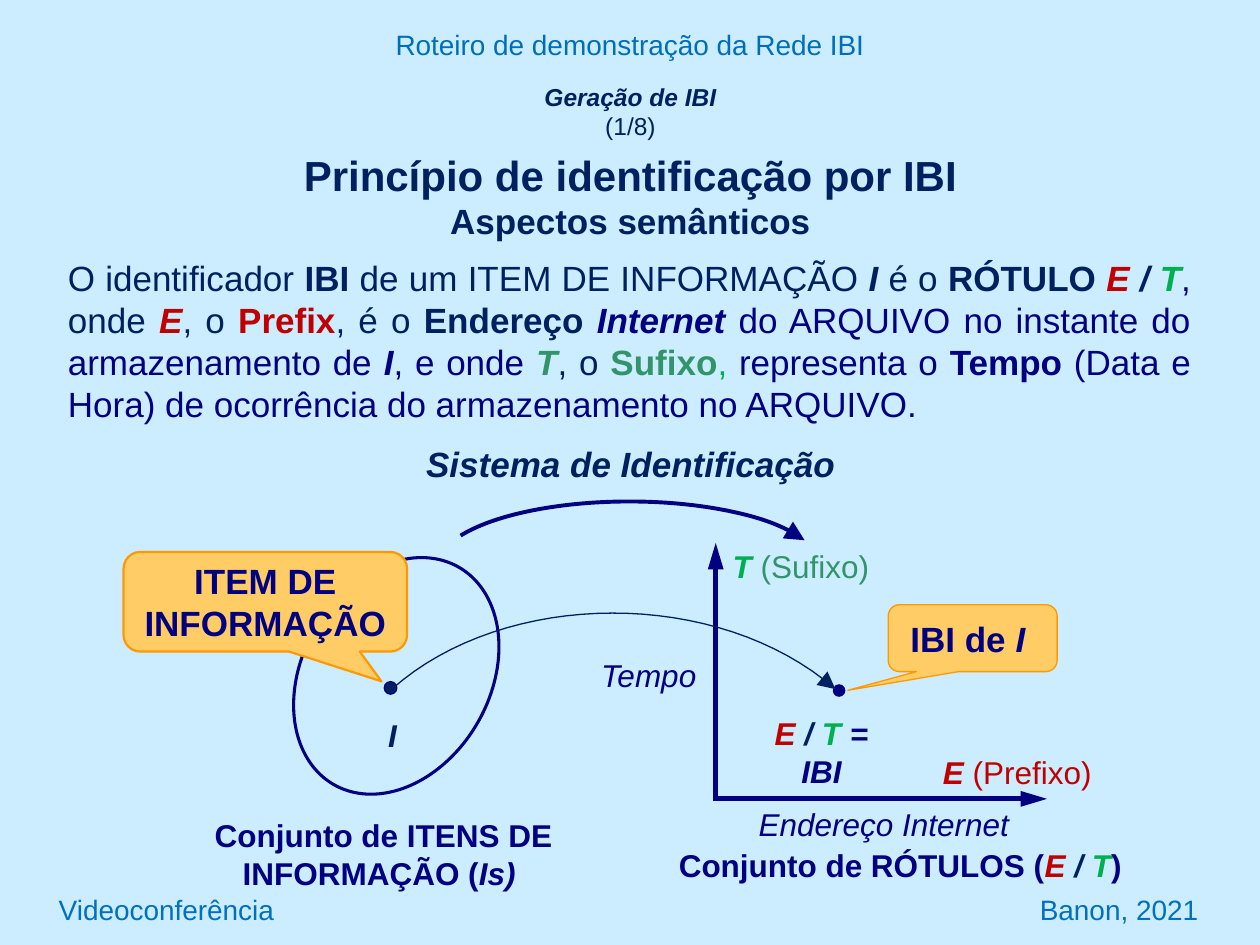
from lxml import etree
from pptx import Presentation
from pptx.dml.color import RGBColor
from pptx.enum.shapes import MSO_CONNECTOR, MSO_SHAPE
from pptx.enum.text import MSO_ANCHOR, MSO_AUTO_SIZE, PP_ALIGN
from pptx.oxml.ns import qn
from pptx.util import Pt

NAVY, DARK, RED, GREEN, TEAL = "000080", "002060", "C00000", "00B050", "32946A"
BLUE, PALE, ORANGE, AMBER = "0070C0", "CCECFF", "FF9900", "FFCC66"
color = RGBColor.from_string


def add_spans(para, size, spans, align=PP_ALIGN.CENTER):
    """Add (text, colour, style) runs; style holds b for bold and i for italic."""
    para.alignment = align
    for text, hue, style in spans:
        span = para.add_run()
        span.text = text
        span.font.name = "Arial"
        span.font.size = Pt(size)
        span.font.bold = "b" in style
        span.font.italic = "i" in style
        span.font.color.rgb = color(hue)


def paint(shape, line, weight=0.75, fill=None, head=None):
    """Set outline, fill and end arrow (width, length), and remove the shadow."""
    if line:
        shape.line.color.rgb = color(line)
        shape.line.width = Pt(weight)
    else:
        shape.line.fill.background()
    if fill:
        shape.fill.solid()
        shape.fill.fore_color.rgb = color(fill)
    elif hasattr(shape, "fill"):
        shape.fill.background()
    properties = shape._element.spPr
    if head:
        etree.SubElement(properties.find(qn("a:ln")), qn("a:tailEnd"),
                         type="triangle", w=head[0], len=head[1])
    etree.SubElement(properties, qn("a:effectLst"))


deck = Presentation()
deck.slide_width, deck.slide_height = Pt(720), Pt(540)
page = deck.slides.add_slide(deck.slide_layouts[5])
page.background.fill.solid()
page.background.fill.fore_color.rgb = color(PALE)
shapes = page.shapes

# Heading
title = shapes.title
title.left, title.top, title.width, title.height = Pt(149), Pt(43.2), Pt(422.6), Pt(97.2)
frame = title.text_frame
frame.auto_size = MSO_AUTO_SIZE.NONE
frame.vertical_anchor = MSO_ANCHOR.TOP
para = frame.paragraphs[0]
add_spans(para, 14, [("Geração de IBI", DARK, "bi")])
para.add_line_break()
add_spans(para, 14, [("(1/8)", DARK, "")])
para = frame.add_paragraph()
para.space_before = Pt(4.8)
add_spans(para, 24, [("Princípio de identificação por IBI ", DARK, "b")])
add_spans(para, 20, [("Aspectos semânticos", DARK, "b")])

# Definition
box = shapes.add_textbox(Pt(31.7), Pt(146.6), Pt(655.9), Pt(102.5))
frame = box.text_frame
frame.word_wrap = True
frame.margin_top = frame.margin_bottom = 0
add_spans(frame.paragraphs[0], 20, [
    ("O identificador ", DARK, ""), ("IBI", DARK, "b"),
    (" de um ITEM DE INFORMAÇÃO ", DARK, ""), ("I", DARK, "bi"),
    (" é o ", DARK, ""), ("RÓTULO", DARK, "b"), (" E ", RED, "bi"),
    ("/ ", DARK, "bi"), ("T", GREEN, "bi"), (", ", NAVY, ""),
    ("onde ", DARK, ""), ("E", RED, "bi"), (", o ", DARK, ""),
    ("Prefix", RED, "b"), (", é o ", DARK, ""), ("Endereço ", DARK, "b"),
    ("Internet ", NAVY, "bi"),
    ("do ARQUIVO no instante do armazenamento de ", NAVY, ""),
    ("I", NAVY, "bi"), (", e onde ", NAVY, ""), ("T", TEAL, "bi"),
    (", o ", DARK, ""), ("Sufixo", TEAL, "b"), (", ", GREEN, ""),
    ("representa o ", NAVY, ""), ("Tempo", NAVY, "b"),
    (" (Data e Hora) de ocorrência do armazenamento no ARQUIVO.", NAVY, ""),
], PP_ALIGN.JUSTIFY)

# Axes of the label set
for start_x, start_y, end_x, end_y in [(407.5, 456.5, 598.3, 456.5),
                                       (409, 456.5, 409, 310.3)]:
    axis = shapes.add_connector(MSO_CONNECTOR.STRAIGHT, Pt(start_x), Pt(start_y),
                                Pt(end_x), Pt(end_y))
    paint(axis, NAVY, 3, head=("med", "lg"))

# Item set and the two points
for left, top, width, height, angle, line, weight, fill in [
    (475.9, 391, 7.2, 7.2, 0, None, 0, NAVY),
    (172.8, 314.6, 107.3, 143.3, 30, NAVY, 1.75, None),
    (219.6, 389.5, 7.2, 7.2, 0, NAVY, 0.75, DARK),
]:
    oval = shapes.add_shape(MSO_SHAPE.OVAL, Pt(left), Pt(top), Pt(width), Pt(height))
    oval.rotation = angle
    paint(oval, line, weight, fill)

# Curved arrow from the item to its label, sampled from a Bézier curve
controls = [(223.9, 393.8), (288.7, 336.2), (410.4, 335.5), (477.4, 393.8)]
steps = 32
curve = []
for step in range(steps + 1):
    t = step / steps
    weights = [(1 - t) ** 3, 3 * t * (1 - t) ** 2, 3 * t ** 2 * (1 - t), t ** 3]
    curve.append(tuple(Pt(sum(w * point[axis] for w, point in zip(weights, controls)))
                       for axis in (0, 1)))
builder = shapes.build_freeform(*curve[0])
builder.add_line_segments(curve[1:], close=False)
paint(builder.convert_to_shape(), DARK, 0.75, head=("lg", "lg"))

# Callouts
for left, top, width, height, tip, weight, spans in [
    (507.6, 345.6, 96.5, 38.2, (-0.74, 0.78), 0.75,
     [("IBI de ", NAVY, "b"), ("I ", NAVY, "bi")]),
    (70.6, 315.4, 162, 56.9, (0.41, 0.8), 1.25,
     [("ITEM DE INFORMAÇÃO", NAVY, "b")]),
]:
    callout = shapes.add_shape(MSO_SHAPE.ROUNDED_RECTANGULAR_CALLOUT,
                               Pt(left), Pt(top), Pt(width), Pt(height))
    callout.adjustments[0], callout.adjustments[1] = tip
    paint(callout, ORANGE, weight, AMBER)
    callout.text_frame.vertical_anchor = MSO_ANCHOR.MIDDLE
    add_spans(callout.text_frame.paragraphs[0], 20, spans)

# Arc of the identification system, angles in degrees
arc = shapes.add_shape(MSO_SHAPE.ARC, Pt(249.8), Pt(286.6), Pt(219.6), Pt(74.9))
for index, degrees in enumerate((190.55, 351.31)):
    arc.adjustments[index] = degrees * 0.6
paint(arc, NAVY, 2.25, head=("lg", "lg"))

# Labels: left, top, width, height, wrap, size, alignment, spans
CENTER = PP_ALIGN.CENTER
for left, top, width, height, wrap, size, align, spans in [
    (425.5, 456.5, 159.1, 28.8, False, 18, CENTER, [("Endereço Internet", NAVY, "i")]),
    (108, 463, 217.4, 51.1, True, 18, CENTER,
     [(" Conjunto de ITENS DE INFORMAÇÃO (", NAVY, "b"), ("Is)", NAVY, "bi")]),
    (214.6, 405.4, 19.4, 28.8, False, 18, CENTER, [("I", DARK, "bi")]),
    (433.4, 404.6, 72, 50.4, True, 18, CENTER,
     [("E", RED, "bi"), (" / ", DARK, "bi"), ("T ", GREEN, "bi"), ("= IBI", NAVY, "bi")]),
    (405.4, 308.9, 99.4, 28.8, True, 18, CENTER,
     [(" ", DARK, "bi"), ("T ", GREEN, "bi"), ("(Sufixo)", TEAL, "")]),
    (530.6, 427, 101.5, 28.8, True, 18, CENTER,
     [("E ", RED, "bi"), ("(Prefixo)", RED, "")]),
    (336.2, 371.5, 69.1, 28.8, False, 18, CENTER, [("Tempo", NAVY, "i")]),
    (0, 12.2, 720, 26.6, True, 16, CENTER,
     [("Roteiro de demonstração da Rede IBI", "006FBA", "")]),
    (26.5, 506.5, 180, 26.6, True, 16, PP_ALIGN.LEFT, [("Videoconferência", BLUE, "")]),
    (511.8, 506.5, 180, 26.6, True, 16, PP_ALIGN.RIGHT, [("Banon, 2021", BLUE, "")]),
    (379.4, 480.2, 275, 28.8, False, 18, CENTER,
     [("Conjunto de RÓTULOS (", NAVY, "b"), ("E ", RED, "bi"), ("/ ", DARK, "bi"),
      ("T", GREEN, "bi"), (") ", NAVY, "b")]),
    (232.6, 249.1, 255.6, 31.7, False, 20, CENTER,
     [("Sistema de Identificação", DARK, "bi")]),
]:
    box = shapes.add_textbox(Pt(left), Pt(top), Pt(width), Pt(height))
    box.text_frame.word_wrap = wrap
    add_spans(box.text_frame.paragraphs[0], size, spans, align)

deck.save("out.pptx")
